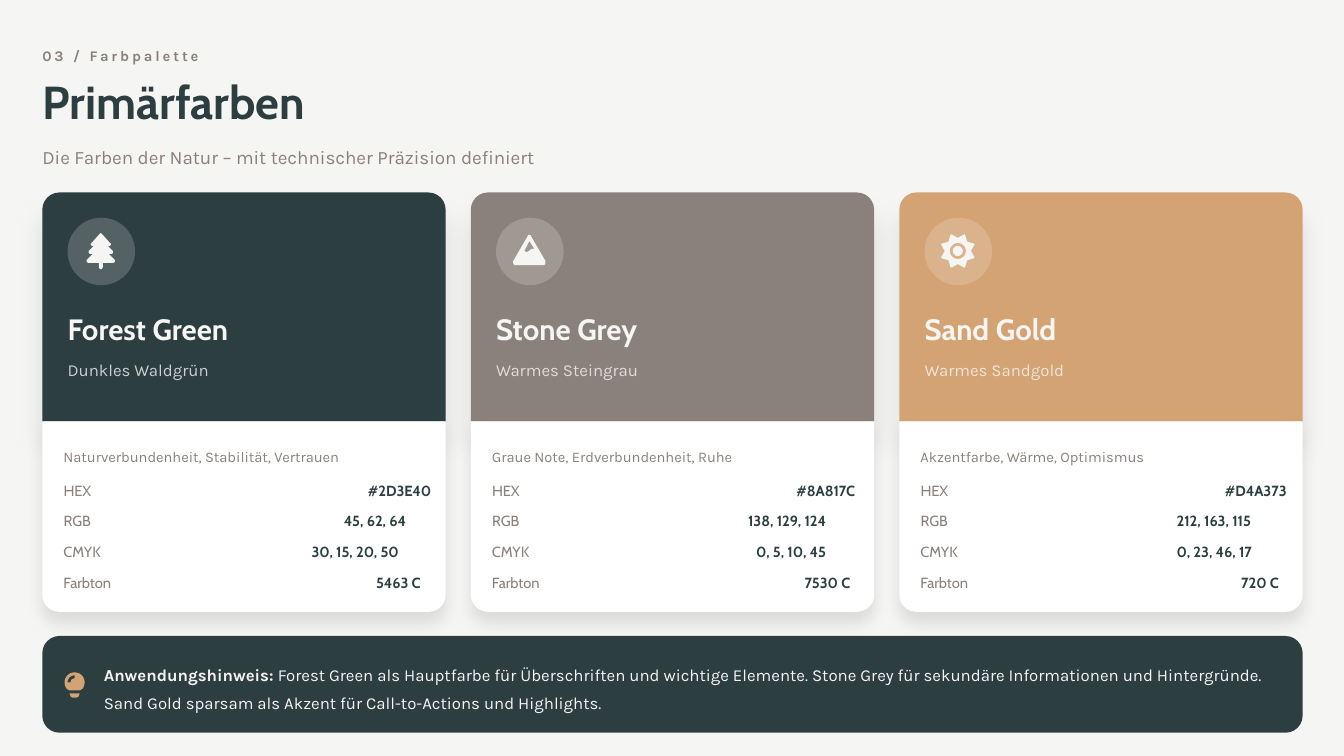
import math
from dataclasses import dataclass

import pptx
import pptx.dml.color
import pptx.dml.fill
import pptx.enum.shapes
import pptx.enum.text
import pptx.oxml
import pptx.oxml.ns
import pptx.oxml.xmlchemy
import pptx.shapes.autoshape
import pptx.slide
import pptx.util

Inches = pptx.util.Inches
MSO = pptx.enum.shapes.MSO_SHAPE
Box = tuple[float, float, float, float]
Points = list[tuple[float, float]]

FOREST, STONE, SAND = "2D3E40", "8A817C", "D4A373"
PAPER, WHITE = "F5F5F3", "FFFFFF"
MARGIN, CARD_W, CARD_STEP, RADIUS = 0.42, 4.0, 4.25, 0.17
SWATCH_TOP, SWATCH_H, DETAIL_H = 1.91, 2.27, 1.89
ROW_TOP, ROW_STEP = 4.73, 0.91 / 3


@dataclass
class Card:
    name: str
    subtitle: str
    color: str
    meaning: str
    values: dict[str, str]
    icon: list[Points]


def paint(fill: pptx.dml.fill.FillFormat, element: pptx.oxml.xmlchemy.BaseOxmlElement,
          color: str, alpha: int = 100) -> None:
    fill.solid()
    fill.fore_color.rgb = pptx.dml.color.RGBColor.from_string(color)
    if alpha < 100:
        clr = element.xpath(".//a:solidFill/a:srgbClr")[0]
        clr.append(pptx.oxml.parse_xml(
            f'<a:alpha {pptx.oxml.ns.nsdecls("a")} val="{alpha * 1000}"/>'))


def finish(sp: pptx.shapes.autoshape.Shape, color: str, alpha: int = 100) -> None:
    sp.shadow.inherit = False
    sp.line.fill.background()
    paint(sp.fill, sp._element, color, alpha)


def add_shape(s: pptx.slide.Slide, kind: MSO, box: Box, color: str,
              adjustments: tuple[float, ...] = (), alpha: int = 100) -> pptx.shapes.autoshape.Shape:
    sp = s.shapes.add_shape(kind, *map(Inches, box))
    for i, value in enumerate(adjustments):
        sp.adjustments[i] = value
    finish(sp, color, alpha)
    return sp


def add_shadow(sp: pptx.shapes.autoshape.Shape, blur: float, dist: float) -> None:
    effects = sp._element.spPr.find(pptx.oxml.ns.qn("a:effectLst"))
    effects.append(pptx.oxml.parse_xml(
        f'<a:outerShdw {pptx.oxml.ns.nsdecls("a")} blurRad="{pptx.util.Pt(blur)}" '
        f'dist="{pptx.util.Pt(dist)}" dir="5400000" algn="ctr" rotWithShape="0">'
        '<a:srgbClr val="000000"><a:alpha val="10000"/></a:srgbClr></a:outerShdw>'))


def add_icon(s: pptx.slide.Slide, contours: list[Points], cx: float, cy: float, color: str) -> None:
    placed = [[((cx + x) * 1000, (cy + y) * 1000) for x, y in c] for c in contours]
    builder = s.shapes.build_freeform(*placed[0][0], scale=Inches(1) / 1000)
    for i, points in enumerate(placed):
        if i:
            builder.move_to(*points[0])
        builder.add_line_segments(points[1:], close=True)
    finish(builder.convert_to_shape(), color)


def format_frame(sp: pptx.shapes.autoshape.Shape, box: Box, leading: float):
    sp.left, sp.top, sp.width, sp.height = map(Inches, box)
    tf = sp.text_frame
    tf.word_wrap = True
    tf.auto_size = pptx.enum.text.MSO_AUTO_SIZE.NONE
    tf.vertical_anchor = pptx.enum.text.MSO_ANCHOR.MIDDLE
    tf.margin_left = tf.margin_right = tf.margin_top = tf.margin_bottom = 0
    p = tf.paragraphs[0]
    p.alignment = pptx.enum.text.PP_ALIGN.LEFT
    p.line_spacing = leading
    return p


def add_box(s: pptx.slide.Slide, box: Box, leading: float = 1.3):
    return format_frame(s.shapes.add_textbox(0, 0, 0, 0), box, leading)


def write(p, text: str, *, size: float = 10.5, font: str = "Karla", color: str = STONE,
          bold: bool = False, alpha: int = 100, spacing: float = 0) -> None:
    r = p.add_run()
    r.text = text
    r.font.size = pptx.util.Pt(size)
    r.font.name = font
    r.font.bold = bold
    paint(r.font.fill, r._r, color, alpha)
    if spacing:
        r._r.get_or_add_rPr().set("spc", str(round(spacing * 100)))


def arc(cx: float, cy: float, radius: float, start: int = 0, end: int = 360) -> Points:
    step = 10 if end > start else -10
    return [(cx + radius * math.cos(math.radians(a)), cy + radius * math.sin(math.radians(a)))
            for a in range(start, end + step, step)]


def tree() -> list[Points]:
    right = [(0, -0.18), (0.01, -0.17), (0.1, -0.07), (0.1, -0.06), (0.09, -0.05), (0.07, -0.05),
             (0.12, 0), (0.12, 0.02), (0.11, 0.03), (0.08, 0.03), (0.14, 0.09), (0.14, 0.11),
             (0.12, 0.12), (0.02, 0.12), (0.02, 0.16), (0.01, 0.18)]
    return [right + [(-x, y) for x, y in reversed(right)]]


def mountain() -> list[Points]:
    right = [(0.01, -0.16), (0.02, -0.14), (0.16, 0.1), (0.16, 0.12), (0.15, 0.14), (0.13, 0.14)]
    snow = [(-0.05, 0), (-0.03, 0.01), (-0.02, 0.01), (0.01, -0.01), (0.02, -0.02),
            (0.05, -0.02), (0, -0.1)]
    return [right + [(-x, y) for x, y in reversed(right)], snow]


def sun() -> list[Points]:
    rays = []
    for a in range(0, 360, 45):
        for turn, radius in ((0, 0.13), (19, 0.17), (22.5, 0.18), (26, 0.17)):
            t = math.radians(a + turn)
            rays.append((radius * math.cos(t), radius * math.sin(t)))
    return [rays, arc(0, 0, 0.08), arc(0, 0, 0.05)]


def bulb() -> list[Points]:
    glass = arc(0, -0.03, 0.1, 140, 400) + [(0.05, 0.05), (-0.05, 0.05)]
    base = [(-0.05, 0.08), (0.05, 0.08), (0.04, 0.11), (0.02, 0.12), (-0.02, 0.12), (-0.04, 0.11)]
    glint = arc(0, -0.03, 0.07, 180, 270) + arc(0, -0.03, 0.04, 270, 180)
    return [glass, base, glint]


def add_card(s: pptx.slide.Slide, card: Card, x: float) -> None:
    swatch = add_shape(s, MSO.ROUND_2_SAME_RECTANGLE, (x, SWATCH_TOP, CARD_W, SWATCH_H),
                       card.color, (RADIUS / SWATCH_H, 0))
    add_shadow(swatch, 18.8, 15)
    add_shape(s, MSO.OVAL, (x + 0.25, 2.16, 0.67, 0.67), PAPER, alpha=20)
    add_icon(s, card.icon, x + 0.58, 2.49, PAPER)
    write(add_box(s, (x + 0.25, 2.99, 3.65, 0.44)), card.name,
          size=21, font="Cabin", color=PAPER, bold=True)
    write(add_box(s, (x + 0.25, 3.51, 3.58, 0.25)), card.subtitle, size=12, color=PAPER, alpha=80)
    detail = add_shape(s, MSO.ROUND_2_SAME_RECTANGLE,
                       (x, SWATCH_TOP + SWATCH_H, CARD_W, DETAIL_H), WHITE, (0, RADIUS / DETAIL_H))
    add_shadow(detail, 11.2, 7.5)
    write(add_box(s, (x + 0.21, 4.39, 3.66, 0.22)), card.meaning)
    for i, (label, value) in enumerate(card.values.items()):
        y = ROW_TOP + i * ROW_STEP
        label_w, value_w = (0.08 * len(t) + 0.08 for t in (label, value))
        write(add_box(s, (x + 0.21, y, label_w, 0.22)), label, font="Cabin")
        write(add_box(s, (x + 3.87 - value_w, y, value_w, 0.22)), value,
              font="Cabin", color=FOREST, bold=True)


CARDS = [
    Card("Forest Green", "Dunkles Waldgrün", FOREST, "Naturverbundenheit, Stabilität, Vertrauen",
         {"HEX": "#2D3E40", "RGB": "45, 62, 64", "CMYK": "30, 15, 20, 50", "Farbton": "5463 C"}, tree()),
    Card("Stone Grey", "Warmes Steingrau", STONE, "Graue Note, Erdverbundenheit, Ruhe",
         {"HEX": "#8A817C", "RGB": "138, 129, 124", "CMYK": "0, 5, 10, 45", "Farbton": "7530 C"}, mountain()),
    Card("Sand Gold", "Warmes Sandgold", SAND, "Akzentfarbe, Wärme, Optimismus",
         {"HEX": "#D4A373", "RGB": "212, 163, 115", "CMYK": "0, 23, 46, 17", "Farbton": "720 C"}, sun()),
]


def main() -> None:
    prs = pptx.Presentation()
    prs.slide_width, prs.slide_height = Inches(13.33), Inches(7.5)
    s = prs.slides.add_slide(prs.slide_layouts[5])
    paint(s.background.fill, s._element, PAPER)
    write(add_box(s, (MARGIN, 0.42, 12.57, 0.22)), "03 / Farbpalette", bold=True, spacing=2.1)
    write(format_frame(s.shapes.title, (MARGIN, 0.72, 12.73, 0.57), 1.0), "Primärfarben",
          size=33, font="Cabin", color=FOREST, bold=True)
    write(add_box(s, (MARGIN, 1.38, 12.59, 0.28)),
          "Die Farben der Natur – mit technischer Präzision definiert", size=13.5)
    for i, card in enumerate(CARDS):
        add_card(s, card, MARGIN + i * CARD_STEP)
    add_shape(s, MSO.ROUNDED_RECTANGLE, (MARGIN, 6.31, 12.5, 0.96), FOREST, (RADIUS / 0.96,))
    add_icon(s, bulb(), 0.74, 6.8, SAND)
    p = add_box(s, (1.03, 6.52, 11.76, 0.54), 1.4)
    write(p, "Anwendungshinweis:", size=12, color=PAPER, bold=True)
    write(p, " Forest Green als Hauptfarbe für Überschriften und wichtige Elemente. Stone Grey für "
          "sekundäre Informationen und Hintergründe. Sand Gold sparsam als Akzent für "
          "Call-to-Actions und Highlights.", size=12, color=PAPER)
    prs.save("out.pptx")


if __name__ == "__main__":
    main()
